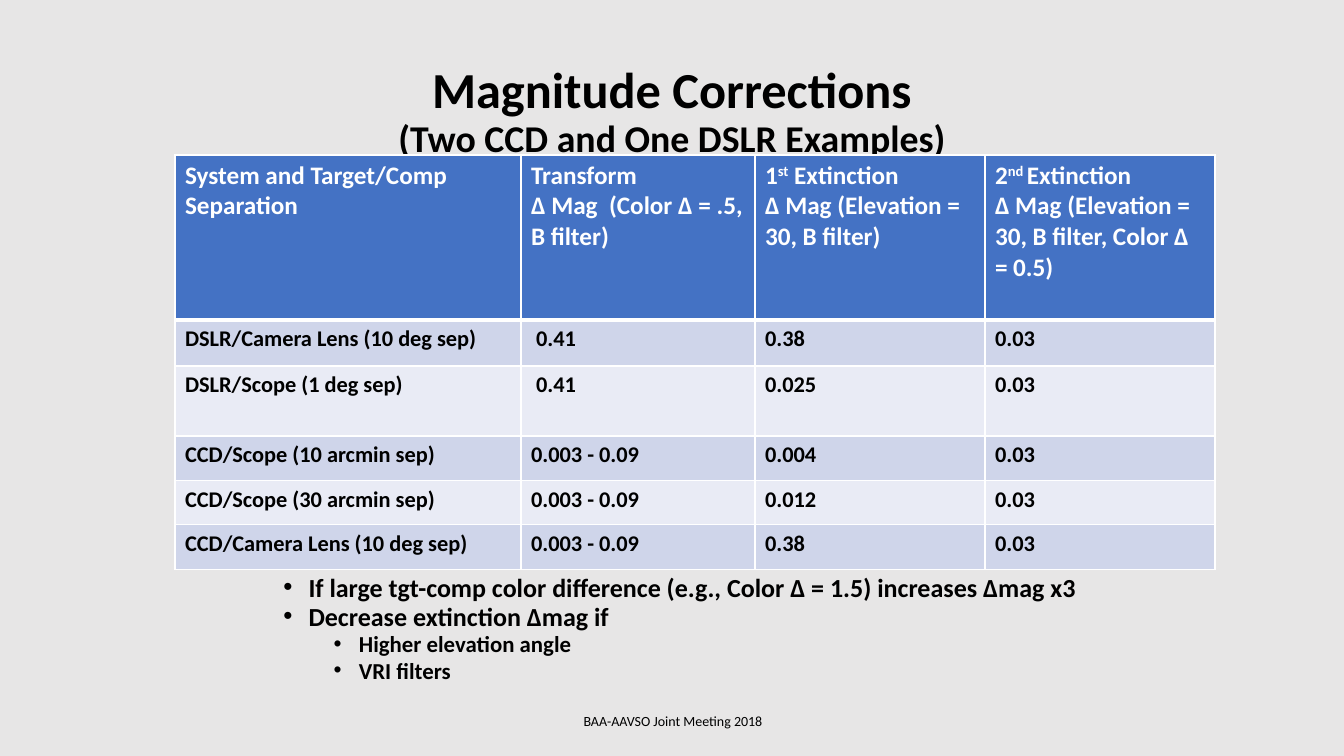
from dataclasses import dataclass

from lxml.etree import SubElement
from pptx import Presentation
from pptx.dml.color import RGBColor as RGB
from pptx.enum.text import MSO_ANCHOR as Anchor, PP_ALIGN as Align
from pptx.oxml.ns import qn
from pptx.util import Pt

PX = 12192000 / 1344


@dataclass(frozen=True)
class Theme:
    font: str = "Calibri"
    back: str = "E7E6E6"
    ink: str = "000000"
    white: str = "FFFFFF"
    head: str = "4472C4"
    bands: tuple = ("CFD5EA", "E9EBF5")
    title: float = 36
    sub: float = 27
    label: float = 18
    cell: float = 16
    notes: tuple = (18.6, 16.3)
    foot: float = 10


theme = Theme()


def write(par, text, size, color=theme.ink, bold=True):
    run = par.add_run()
    run.text = text
    font = run.font
    font.name, font.size, font.bold = theme.font, Pt(size), bold
    font.color.rgb = RGB.from_string(color)
    return run


def add_box(left, top, width, height, anchor):
    box = slide.shapes.add_textbox(*[round(n * PX) for n in (left, top, width, height)])
    frame = box.text_frame
    frame.word_wrap = True
    frame.vertical_anchor = anchor
    return frame


deck = Presentation()
deck.slide_width, deck.slide_height = round(1344 * PX), round(756 * PX)
slide = deck.slides.add_slide(deck.slide_layouts[6])
slide.background.fill.solid()
slide.background.fill.fore_color.rgb = RGB.from_string(theme.back)

# Title
par = add_box(93, 40, 1158, 146, Anchor.MIDDLE).paragraphs[0]
par.alignment = Align.CENTER
par.line_spacing = 0.9
write(par, "Magnitude Corrections", theme.title)
par.add_line_break()
write(par, "(Two CCD and One DSLR Examples)", theme.sub)

# Notes below the table
notes = [
    (0, "If large tgt-comp color difference (e.g., Color ∆ = 1.5) increases ∆mag x3"),
    (0, "Decrease extinction ∆mag if"),
    (1, "Higher elevation angle"),
    (1, "VRI filters"),
]
frame = add_box(223, 580, 899, 110, Anchor.TOP)
frame.margin_top = 0
for i, (level, text) in enumerate(notes):
    par = frame.add_paragraph() if i else frame.paragraphs[0]
    par.level = level + 1
    par.line_spacing = 0.7
    par.space_before = Pt(5 if i else 0)
    props = par._p.get_or_add_pPr()
    props.set("marL", str(Pt(54 + 36 * level)))
    props.set("indent", str(Pt(-18)))
    SubElement(props, qn("a:buFont"), typeface="Arial")
    SubElement(props, qn("a:buChar"), char="•")
    write(par, text, theme.notes[level])

# Footer
par = add_box(446, 701, 454, 40, Anchor.MIDDLE).paragraphs[0]
par.alignment = Align.CENTER
write(par, "BAA-AAVSO Joint Meeting 2018", theme.foot, bold=False)

# Table: a cell is a list of paragraphs, a paragraph a list of runs, "^" marks a superscript
heads = [
    [["System and Target/Comp Separation"]],
    [["Transform"], ["∆ Mag  (Color ∆ = .5, B filter)"]],
    [["1", "^st", " Extinction"], ["∆ Mag (Elevation = 30, B filter)"]],
    [["2", "^nd ", "Extinction"], ["∆ Mag (Elevation = 30, B filter, Color ∆ = 0.5)"]],
]
data = [
    ("DSLR/Camera Lens (10 deg sep)", " 0.41", "0.38", "0.03"),
    ("DSLR/Scope (1 deg sep)", " 0.41", "0.025", "0.03"),
    ("CCD/Scope (10 arcmin sep)", "0.003 - 0.09", "0.004", "0.03"),
    ("CCD/Scope (30 arcmin sep)", "0.003 - 0.09", "0.012", "0.03"),
    ("CCD/Camera Lens (10 deg sep)", "0.003 - 0.09", "0.38", "0.03"),
]
rows = [heads] + [[[[text]] for text in row] for row in data]
wide = [346, 234, 230, 230]
tall = [165, 46, 70, 45, 44, 45]
area = [round(n * PX) for n in (175, 155, sum(wide), sum(tall))]
table = slide.shapes.add_table(len(rows), len(wide), *area).table
for col, width in zip(table.columns, wide):
    col.width = round(width * PX)

for r, row in enumerate(rows):
    table.rows[r].height = round(tall[r] * PX)
    fill = theme.bands[(r - 1) % 2] if r else theme.head
    color, size = (theme.ink, theme.cell) if r else (theme.white, theme.label)
    for c, pars in enumerate(row):
        cell = table.cell(r, c)
        for i, runs in enumerate(pars):
            par = cell.text_frame.add_paragraph() if i else cell.text_frame.paragraphs[0]
            for text in runs:
                run = write(par, text.lstrip("^"), size, color)
                if text.startswith("^"):
                    run._r.get_or_add_rPr().set("baseline", "30000")
        props = cell._tc.get_or_add_tcPr()
        for side in "LRTB":
            thick = (r, side) in ((0, "B"), (1, "T"))
            line = SubElement(props, qn(f"a:ln{side}"), w=str(Pt(3 if thick else 1)))
            paint = SubElement(line, qn("a:solidFill"))
            SubElement(paint, qn("a:srgbClr"), val=theme.white)
        cell.fill.solid()
        cell.fill.fore_color.rgb = RGB.from_string(fill)

deck.save("out.pptx")
